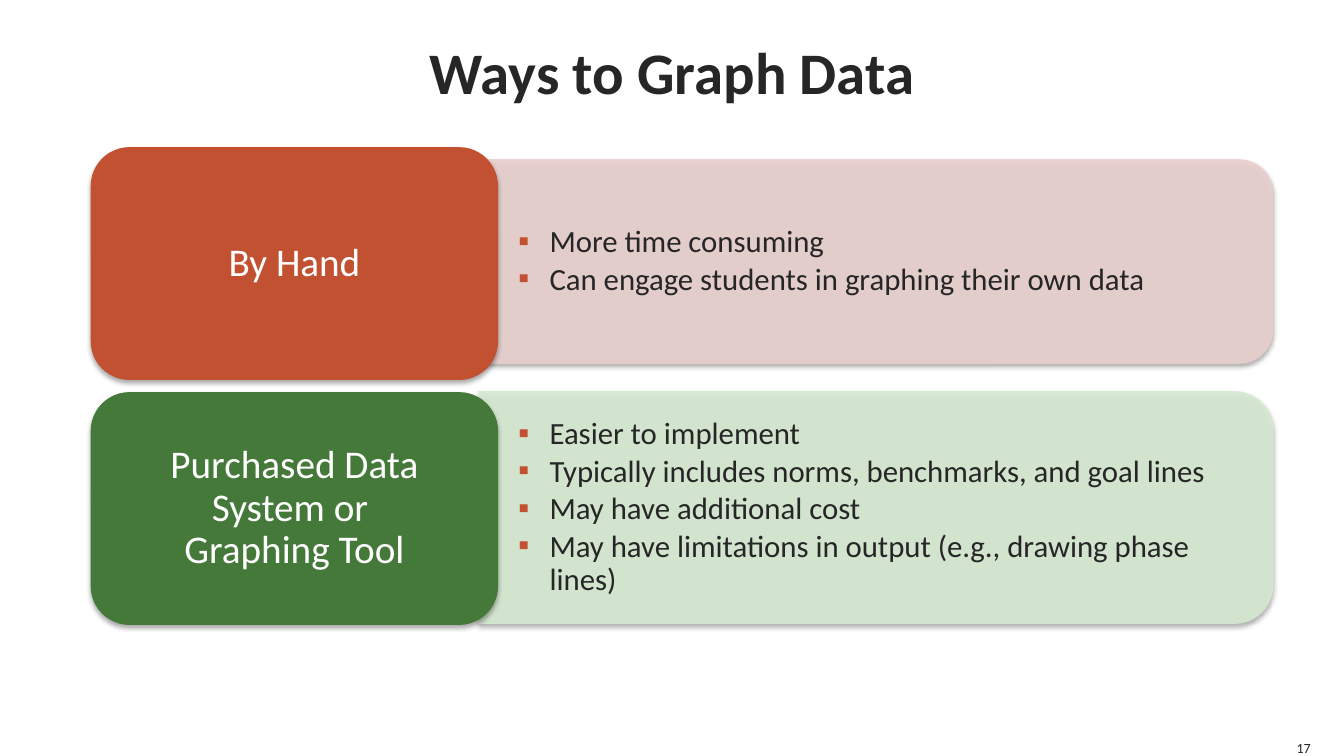
from lxml import etree
from pptx import Presentation
from pptx.dml.color import RGBColor
from pptx.enum.shapes import MSO_SHAPE
from pptx.enum.text import MSO_ANCHOR, PP_ALIGN
from pptx.oxml.ns import qn
from pptx.util import Inches, Pt

ROUNDED = MSO_SHAPE.ROUNDED_RECTANGLE
ROUNDED_END = MSO_SHAPE.ROUND_2_SAME_RECTANGLE
MIDDLE, BOTTOM = MSO_ANCHOR.MIDDLE, MSO_ANCHOR.BOTTOM
LEFT, CENTER, RIGHT = PP_ALIGN.LEFT, PP_ALIGN.CENTER, PP_ALIGN.RIGHT

FONT = "Calibri"
COLORS = {
    "text": "262626",
    "white": "FFFFFF",
    "shadow": "000000",
    "rust": "C25131",
    "pink": "E9D0CE",
    "green": "447939",
    "mint": "D6EAD2",
}

LABEL_LEFT, LABEL_WIDTH, LABEL_HEIGHT = 0.9, 4.04, 2.31
PANEL_LEFT, PANEL_WIDTH = 4.74, 7.89
FIRST_TOP, ROW_PITCH = 1.46, 2.43

ROWS = [
    {
        "label": ["By Hand"],
        "colors": ("rust", "pink"),
        "panel": (1.58, 2.03),
        "points": [
            "More time consuming",
            "Can engage students in graphing their own data",
        ],
    },
    {
        "label": ["Purchased Data System or ", "Graphing Tool"],
        "colors": ("green", "mint"),
        "panel": (3.88, 2.31),
        "points": [
            "Easier to implement",
            "Typically includes norms, benchmarks, and goal lines",
            "May have additional cost",
            "May have limitations in output (e.g., drawing phase lines)",
        ],
    },
]


def add_shadow(shape):
    shape.shadow.inherit = False
    effects = shape._element.spPr.find(qn("a:effectLst"))
    shadow = etree.SubElement(
        effects, qn("a:outerShdw"), blurRad=str(Pt(3.5)), dist=str(Pt(2.2)),
        dir="5400000", rotWithShape="0")
    color = etree.SubElement(shadow, qn("a:srgbClr"), val=COLORS["shadow"])
    etree.SubElement(color, qn("a:alpha"), val="32000")


def add_block(slide, kind, left, top, width, height, color):
    shape = slide.shapes.add_shape(
        kind, Inches(left), Inches(top), Inches(width), Inches(height))
    shape.fill.solid()
    shape.fill.fore_color.rgb = RGBColor.from_string(COLORS[color])
    shape.line.fill.background()
    add_shadow(shape)
    return shape


def add_panel(slide, top, height, color):
    left = PANEL_LEFT + (PANEL_WIDTH - height) / 2
    upright_top = top + (height - PANEL_WIDTH) / 2
    panel = add_block(slide, ROUNDED_END, left, upright_top, height, PANEL_WIDTH, color)
    panel.rotation = 90
    fill_color = panel._element.spPr.find(qn("a:solidFill"))[0]
    etree.SubElement(fill_color, qn("a:alpha"), val="90000")


def add_text_frame(slide, left, top, width, height, anchor=MIDDLE, inset=(0, 0), wrap=True):
    box = slide.shapes.add_textbox(
        Inches(left), Inches(top), Inches(width), Inches(height))
    frame = box.text_frame
    frame.word_wrap = wrap
    frame.vertical_anchor = anchor
    frame.margin_left = frame.margin_right = Inches(inset[0])
    frame.margin_top = frame.margin_bottom = Inches(inset[1])
    return frame


def write(paragraph, lines, size, color="text", align=LEFT, bold=False):
    paragraph.alignment = align
    for index, line in enumerate(lines):
        if index:
            paragraph.add_line_break()
        run = paragraph.add_run()
        run.text = line
        run.font.name = FONT
        run.font.size = Pt(size)
        run.font.bold = bold
        run.font.color.rgb = RGBColor.from_string(COLORS[color])


def add_bullet(paragraph):
    properties = paragraph._p.get_or_add_pPr()
    properties.set("marL", str(Inches(0.44)))
    properties.set("indent", str(Inches(-0.31)))
    color = etree.SubElement(properties, qn("a:buClr"))
    etree.SubElement(color, qn("a:srgbClr"), val=COLORS["rust"])
    etree.SubElement(properties, qn("a:buFont"), typeface=FONT)
    etree.SubElement(properties, qn("a:buChar"), char="▪")


def add_points(slide, top, height, points):
    frame = add_text_frame(
        slide, PANEL_LEFT, top, PANEL_WIDTH - 0.1, height, inset=(0.27, 0.14))
    for index, point in enumerate(points):
        paragraph = frame.add_paragraph() if index else frame.paragraphs[0]
        add_bullet(paragraph)
        paragraph.line_spacing = 0.9
        paragraph.space_after = Pt(3)
        write(paragraph, [point], 22)


def add_label(slide, top, lines, color):
    add_block(slide, ROUNDED, LABEL_LEFT, top, LABEL_WIDTH, LABEL_HEIGHT, color)
    margin = 0.115
    frame = add_text_frame(
        slide, LABEL_LEFT + margin, top + margin, LABEL_WIDTH - 2 * margin,
        LABEL_HEIGHT - 2 * margin, inset=(0.12, 0.06))
    frame.paragraphs[0].line_spacing = 0.9
    write(frame.paragraphs[0], lines, 28, "white", CENTER)


def main():
    presentation = Presentation()
    presentation.slide_width = Inches(13.33)
    presentation.slide_height = Inches(7.5)
    slide = presentation.slides.add_slide(presentation.slide_layouts[6])

    title = add_text_frame(slide, 0.5, 0, 12.33, 1.4)
    write(title.paragraphs[0], ["Ways to Graph Data"], 42, align=CENTER, bold=True)

    for index, row in enumerate(ROWS):
        label_color, panel_color = row["colors"]
        add_panel(slide, *row["panel"], panel_color)
        add_points(slide, *row["panel"], row["points"])
        add_label(slide, FIRST_TOP + index * ROW_PITCH, row["label"], label_color)

    number = add_text_frame(slide, 12.83, 7.33, 0.17, 0.17, BOTTOM, wrap=False)
    write(number.paragraphs[0], ["17"], 10, align=RIGHT)

    presentation.save("out.pptx")


if __name__ == "__main__":
    main()
